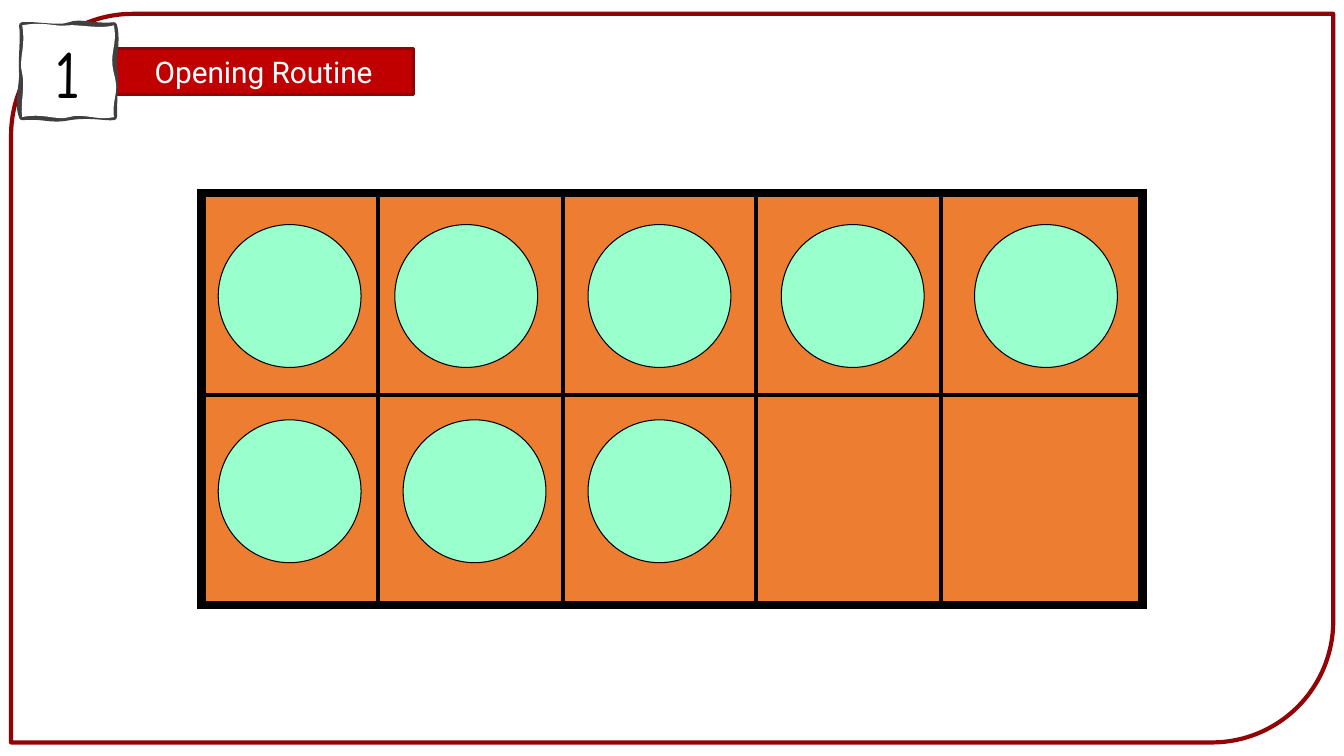
from lxml.etree import SubElement
from pptx import Presentation
from pptx.dml.color import RGBColor
from pptx.enum.shapes import MSO_CONNECTOR, MSO_SHAPE
from pptx.enum.text import MSO_ANCHOR, PP_ALIGN
from pptx.oxml.ns import qn
from pptx.util import Cm, Pt


class Theme:
    white, black = "FFFFFF", "000000"
    red, dark, gray = "C00000", "920305", "404040"
    orange, mint = "ED7D31", "99FFCC"
    label, digit = 21.3, 48


def paint(shape, fill=None, line=Theme.black, width=1):
    shape.shadow.inherit = False
    if fill:
        shape.fill.solid()
        shape.fill.fore_color.rgb = RGBColor.from_string(fill)
    else:
        shape.fill.background()
    shape.line.color.rgb = RGBColor.from_string(line)
    shape.line.width = Pt(width)


def write(shape, text, size, font, color):
    frame = shape.text_frame
    frame.word_wrap = False
    frame.vertical_anchor = MSO_ANCHOR.MIDDLE
    para = frame.paragraphs[0]
    para.alignment = PP_ALIGN.CENTER
    run = para.add_run()
    run.text = text
    run.font.size = Pt(size)
    run.font.name = font
    run.font.color.rgb = RGBColor.from_string(color)


deck = Presentation()
deck.slide_width, deck.slide_height = Cm(33.87), Cm(19.05)
slide = deck.slides.add_slide(deck.slide_layouts[6])
shapes = slide.shapes

# Page border
border = shapes.add_shape(MSO_SHAPE.ROUND_2_DIAG_RECTANGLE,
                          Cm(0.28), Cm(0.35), Cm(33.32), Cm(18.36))
paint(border, line=Theme.dark, width=3)

# Ten frame with square corners
left, top, right, base = 5.08, 4.87, 28.79, 15.24
grid = shapes.add_shape(MSO_SHAPE.RECTANGLE, Cm(left), Cm(top),
                        Cm(right - left), Cm(base - top))
paint(grid, Theme.orange, Theme.black, 6)
SubElement(grid.line._get_or_add_ln(), qn("a:miter"), lim="800000")

# Row and column rules
rules = [(left, 9.96, right, 9.96)]
rules += [(x, top, x, base) for x in (9.53, 14.18, 19.05, 23.71)]
for ends in rules:
    rule = shapes.add_connector(MSO_CONNECTOR.STRAIGHT, *map(Cm, ends))
    rule.line.color.rgb = RGBColor.from_string(Theme.black)
    rule.line.width = Pt(3)
    SubElement(rule._element.spPr, qn("a:effectLst"))

# Counters
side = Cm(3.6)
rows = {5.66: (5.5, 9.95, 14.82, 19.69, 24.56), 10.58: (5.5, 10.16, 14.82)}
for y, row in rows.items():
    for x in row:
        dot = shapes.add_shape(MSO_SHAPE.OVAL, Cm(x), Cm(y), side, side)
        paint(dot, Theme.mint, Theme.black, 0.75)

# Title bar
bar = shapes.add_shape(MSO_SHAPE.RECTANGLE, Cm(2.86), Cm(1.22), Cm(7.57), Cm(1.17))
paint(bar, Theme.red, Theme.dark, 2.25)
write(bar, "Opening Routine", Theme.label, "Roboto", Theme.white)

# Number badge: a square whose sides become wavy curves, in 1/100 cm
size = 231
pen = shapes.build_freeform(0, 0, scale=Cm(0.01))
pen.add_line_segments([(size, 0), (size, size), (0, size)], close=True)
badge = pen.convert_to_shape(Cm(0.56), Cm(0.64))
edge = [
    (35, -3, 94, 10, 119, 0), (147, -11, 180, 5, 231, 0),
    (241, 38, 228, 86, 231, 109), (236, 132, 231, 177, 231, 231),
    (206, 233, 173, 223, 119, 231), (68, 241, 58, 226, 0, 231),
    (-13, 200, 2, 144, 0, 119), (-3, 93, 5, 25, 0, 0),
]
face = [
    (53, -11, 89, 5, 114, 0), (140, -3, 195, 10, 231, 0),
    (241, 53, 218, 66, 231, 121), (246, 175, 226, 180, 231, 231),
    (190, 241, 152, 220, 119, 231), (89, 241, 53, 220, 0, 231),
    (-5, 193, 8, 157, 0, 121), (-10, 86, 10, 55, 0, 0),
]
paths = badge._element.spPr.find(qn("a:custGeom")).find(qn("a:pathLst"))
paths.clear()
for curves, look in ((edge, {"fill": "none"}), (face, {"stroke": "0"})):
    trace = SubElement(paths, qn("a:path"), w=str(size), h=str(size), **look)
    SubElement(SubElement(trace, qn("a:moveTo")), qn("a:pt"), x="0", y="0")
    for curve in curves:
        bend = SubElement(trace, qn("a:cubicBezTo"))
        for x, y in zip(curve[::2], curve[1::2]):
            SubElement(bend, qn("a:pt"), x=str(x), y=str(y))
    SubElement(trace, qn("a:close"))
paint(badge, Theme.white, Theme.gray, 4.5)
write(badge, "1", Theme.digit, "Comic Neue", Theme.black)

deck.save("out.pptx")
